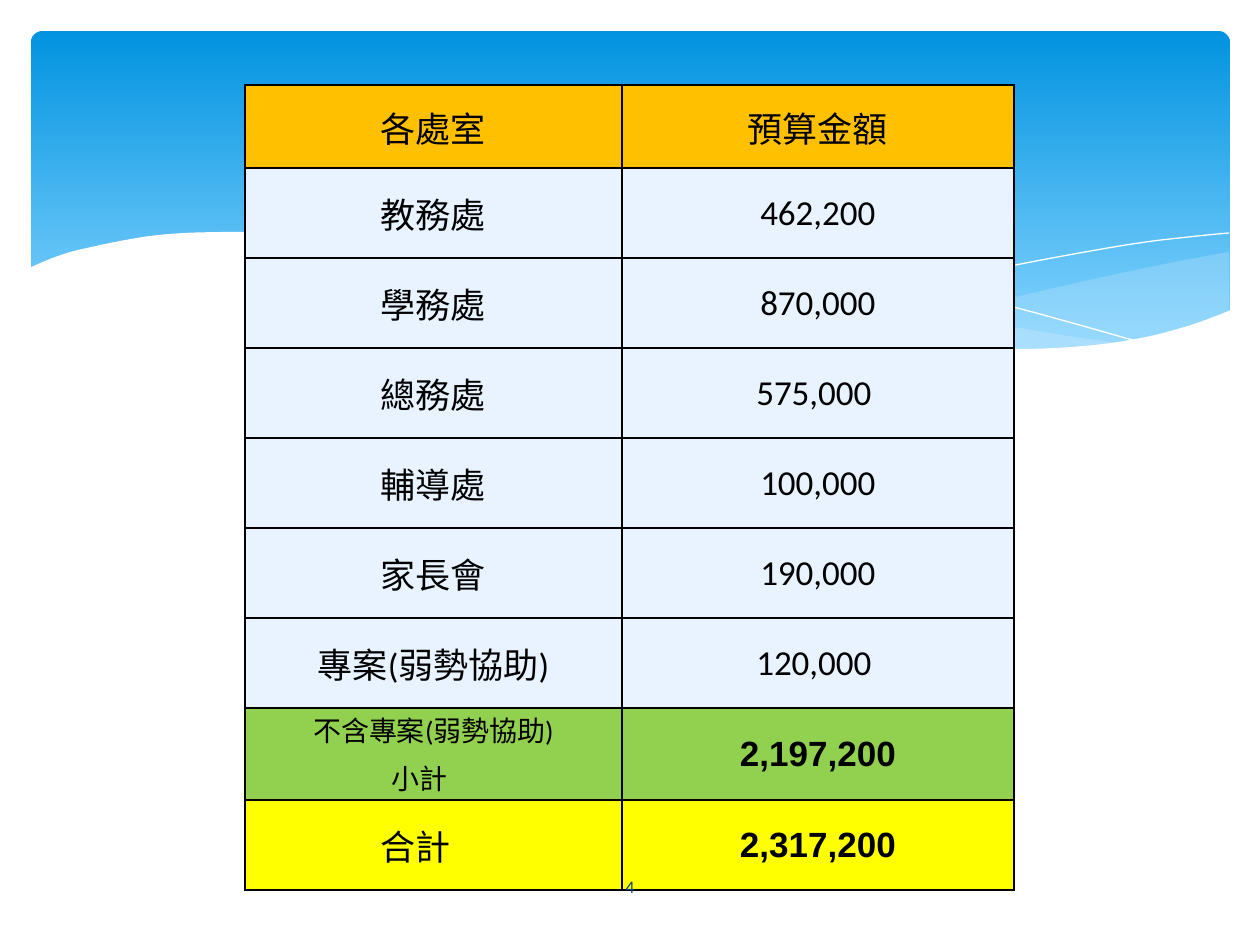
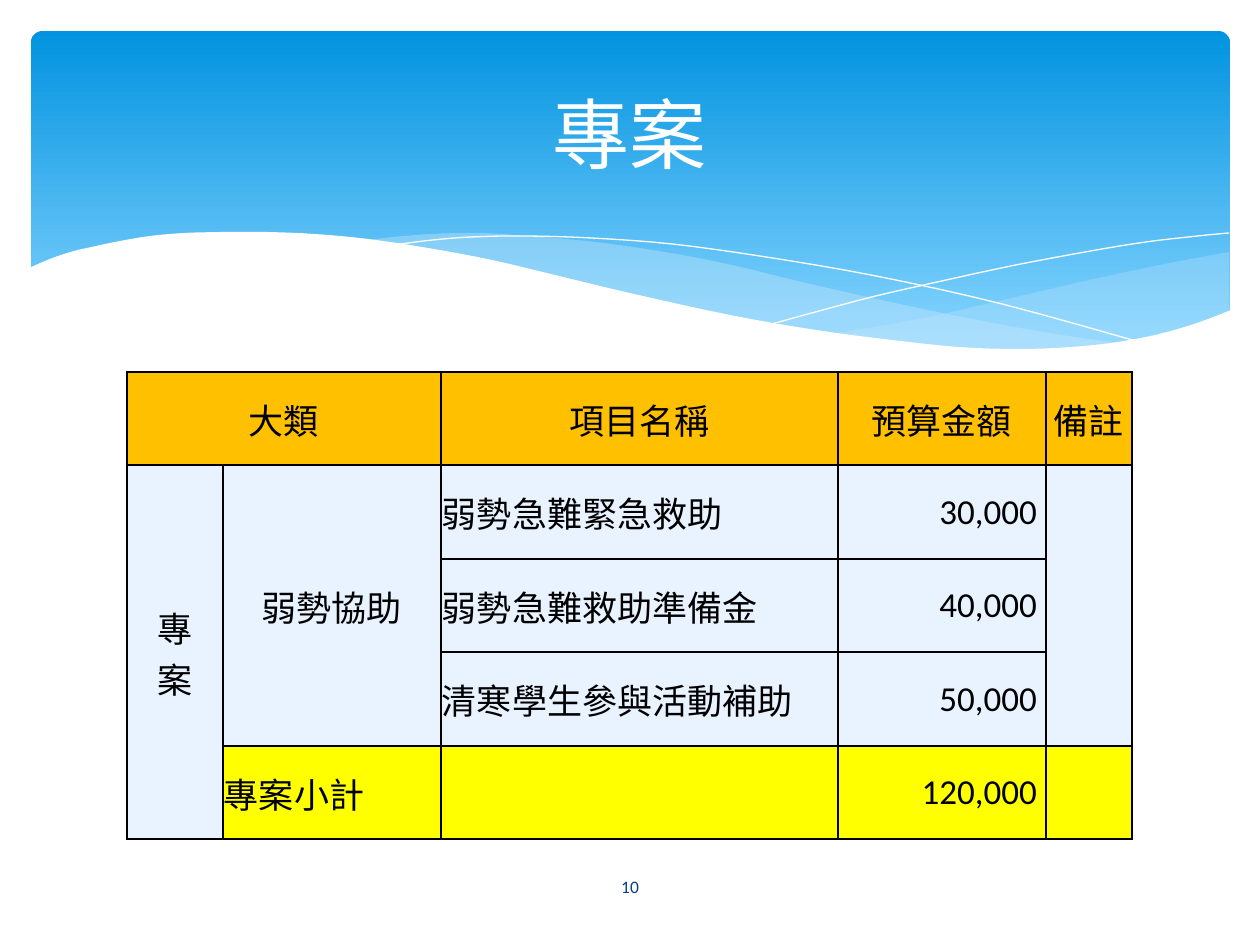
from dataclasses import dataclass
from typing import NamedTuple

from lxml.etree import SubElement
from pptx import Presentation
from pptx.dml.color import RGBColor
from pptx.enum.shapes import MSO_SHAPE as Kind
from pptx.enum.text import MSO_ANCHOR as Anchor, PP_ALIGN as Align
from pptx.oxml.ns import qn
from pptx.util import Emu, Pt

SCALE = 914400 / 126
STEPS = 4
WHITE, BLACK, NAVY = "FFFFFF", "000000", "073E87"
SKY, AQUA, MIST = "0293E0", "83D3FE", "C6E7FC"
GOLD, PALE, GREEN, YELLOW = "FFC000", "E8F3FF", "92D050", "FFFF00"
BODY, BOLD = "Calibri", "Arial"

Point = tuple[float, float]


class Box(NamedTuple):
    left: int
    top: int
    width: int
    height: int


@dataclass(frozen=True)
class Run:
    text: str
    size: int = 20
    font: str = BODY
    colour: str = BLACK
    bold: bool = False


@dataclass(frozen=True)
class Cell:
    paras: tuple[tuple[Run, ...], ...]
    fill: str
    align: Align = Align.CENTER
    down: int = 1
    across: int = 1


@dataclass(frozen=True)
class Grid:
    left: int
    top: int
    cols: tuple[int, ...]
    rows: tuple[int, ...]
    cells: dict[tuple[int, int], Cell]


@dataclass(frozen=True)
class Curve:
    edges: tuple[tuple[Point, ...], ...]
    fill: str = ""
    alpha: int = 100


VEIL_EAST = Curve((
    ((1229, 252), (1212, 255), (1160, 265), (1085, 281), (982, 305),
     (919, 319), (833, 334)),
    ((833, 334), (888, 341), (938, 346), (984, 349), (1026, 350),
     (1077, 348), (1120, 343), (1160, 334), (1196, 324), (1229, 311)),
), MIST, 29)
VEIL_WEST = Curve((
    ((1125, 344), (1055, 334), (977, 320), (890, 302), (793, 280),
     (736, 266), (682, 255), (632, 247), (586, 241), (529, 236),
     (479, 233), (433, 234), (394, 237), (360, 241)),
    ((360, 241), (407, 247), (456, 256), (509, 266), (566, 280),
     (668, 302), (757, 321), (838, 335), (910, 344), (975, 349),
     (1031, 350), (1080, 349), (1125, 344)),
), MIST, 40)
LINE_WEST = Curve((
    ((389, 246), (401, 244), (433, 240), (471, 237), (524, 236),
     (591, 238), (672, 244), (766, 257), (876, 276), (1002, 304),
     (1143, 343)),
))
LINE_EAST = Curve((
    ((772, 324), (823, 310), (876, 296), (942, 281), (1016, 265),
     (1091, 251), (1146, 242), (1198, 236), (1229, 233)),
))
WAVE = Curve((
    ((1231, 310), (1197, 323), (1159, 334), (1118, 342), (1071, 347),
     (1019, 349), (959, 347), (892, 340), (816, 330), (730, 315),
     (634, 294), (563, 277), (492, 260), (428, 248), (368, 239),
     (315, 234), (266, 232), (223, 232), (184, 233), (150, 236),
     (120, 241), (96, 246), (74, 251), (58, 256), (45, 261), (29, 268)),
    ((29, 415), (1231, 415)),
), WHITE)
CURVES = (VEIL_EAST, VEIL_WEST, LINE_WEST, LINE_EAST, WAVE)
BAND = Box(31, 31, 1199, 341)
TITLE = Box(63, 47, 1134, 172)
NUMBER = Box(550, 862, 160, 50)


def px(size: float) -> Emu:
    return Emu(round(size * SCALE))


def rgb(code: str) -> RGBColor:
    return RGBColor.from_string(code)


def smooth(knots: tuple[Point, ...]) -> list[Point]:
    ends = (knots[0], *knots, knots[-1])
    points = [knots[0]]
    for quad in zip(ends, ends[1:], ends[2:], ends[3:]):
        for step in range(1, STEPS + 1):
            t = step / STEPS
            x, y = (
                b + t * (c - a) / 2
                + t * t * (a - 2.5 * b + 2 * c - d / 2)
                + t ** 3 * (3 * b - a - 3 * c + d) / 2
                for a, b, c, d in zip(*quad)
            )
            points.append((x, y))
    return points


def draw_curve(slide, curve: Curve) -> None:
    points = [(px(x), px(y)) for edge in curve.edges for x, y in smooth(edge)]
    pen = slide.shapes.build_freeform(*points[0], scale=1.0)
    pen.add_line_segments(points[1:], close=bool(curve.fill))
    shape = pen.convert_to_shape()
    shape.shadow.inherit = False
    if not curve.fill:
        shape.fill.background()
        shape.line.color.rgb = rgb(WHITE)
        shape.line.width = Pt(0)
        return
    shape.line.fill.background()
    shape.fill.solid()
    shape.fill.fore_color.rgb = rgb(curve.fill)
    if curve.alpha < 100:
        tint = shape._element.spPr.find(qn("a:solidFill")).find(qn("a:srgbClr"))
        SubElement(tint, qn("a:alpha"), val=str(curve.alpha * 1000))


def draw_band(slide) -> None:
    band = slide.shapes.add_shape(Kind.ROUNDED_RECTANGLE, *map(px, BAND))
    band.adjustments[0] = 0.034
    band.shadow.inherit = False
    band.line.fill.background()
    band.fill.gradient()
    band.fill.gradient_angle = 270
    for stop, place, code in zip(band.fill.gradient_stops, (0, 0.9), (SKY, AQUA)):
        stop.position = place
        stop.color.rgb = rgb(code)
    for curve in CURVES:
        draw_curve(slide, curve)


def add_run(para, run: Run) -> None:
    for place, text in enumerate(run.text.split("\n")):
        if place:
            para.add_line_break()
        part = para.add_run()
        part.text = text
        part.font.size = Pt(run.size)
        part.font.name = run.font
        part.font.bold = run.bold
        part.font.color.rgb = rgb(run.colour)


def draw_text(slide, box: Box, run: Run) -> None:
    frame = slide.shapes.add_textbox(*map(px, box)).text_frame
    frame.word_wrap = True
    frame.vertical_anchor = Anchor.MIDDLE
    frame.paragraphs[0].alignment = Align.CENTER
    add_run(frame.paragraphs[0], run)


def add_edges(cell) -> None:
    props = cell._tc.get_or_add_tcPr()
    for place, side in enumerate(("lnL", "lnR", "lnT", "lnB")):
        line = SubElement(props, qn(f"a:{side}"), w=str(Pt(1)))
        SubElement(SubElement(line, qn("a:solidFill")), qn("a:srgbClr"), val=BLACK)
        props.insert(place, line)


def fill_cell(cell, data: Cell) -> None:
    cell.fill.solid()
    cell.fill.fore_color.rgb = rgb(data.fill)
    cell.vertical_anchor = Anchor.MIDDLE
    cell.margin_left = cell.margin_right = cell.margin_top = px(1)
    cell.margin_bottom = 0
    frame = cell.text_frame
    for place, runs in enumerate(data.paras):
        para = frame.add_paragraph() if place else frame.paragraphs[0]
        para.alignment = data.align
        for run in runs:
            add_run(para, run)


def draw_grid(slide, grid: Grid) -> None:
    box = Box(grid.left, grid.top, sum(grid.cols), sum(grid.rows))
    table = slide.shapes.add_table(
        len(grid.rows), len(grid.cols), *map(px, box)).table
    table.first_row = table.horz_banding = False
    for col, width in zip(table.columns, grid.cols):
        col.width = px(width)
    for row, height in zip(table.rows, grid.rows):
        row.height = px(height)
    for (row, col), data in grid.cells.items():
        for down in range(data.down):
            for across in range(data.across):
                cell = table.cell(row + down, col + across)
                cell.fill.solid()
                cell.fill.fore_color.rgb = rgb(data.fill)
                add_edges(cell)
        first = table.cell(row, col)
        if data.down * data.across > 1:
            first.merge(table.cell(row + data.down - 1, col + data.across - 1))
        fill_cell(first, data)


def word(text: str, fill: str, align: Align = Align.CENTER,
         down: int = 1, across: int = 1) -> Cell:
    return Cell(((Run(text),),) if text else (), fill, align, down, across)


def total(text: str, fill: str) -> Cell:
    return Cell(((Run(text, font=BOLD, bold=True),),), fill)


def office_grid() -> Grid:
    sums = (
        ("教務處", "462,200"),
        ("學務處", "870,000"),
        ("總務處", "575,000 "),
        ("輔導處", "100,000"),
        ("家長會", "190,000"),
        ("專案(弱勢協助)", "120,000 "),
    )
    part = Cell(((Run("不含專案(弱勢協助)", 16),),
                 (Run(" 小計", 16), Run("　"))), GREEN)
    lines = [
        (word("各處室", GOLD), word("預算金額", GOLD)),
        *((word(name, PALE), word(sum_, PALE)) for name, sum_ in sums),
        (part, total("2,197,200", GREEN)),
        (word("合計　", YELLOW), total("2,317,200", YELLOW)),
    ]
    cells = {(row, col): cell for row, line in enumerate(lines)
             for col, cell in enumerate(line)}
    return Grid(245, 85, (377, 392), (83,) + (90,) * 8, cells)


def project_grid() -> Grid:
    cells = {
        (0, 0): word("大類", GOLD, across=2),
        (1, 0): word("專\n案", PALE, down=4),
        (1, 1): word("弱勢協助", PALE, down=3),
        (1, 4): word("", PALE, down=3),
        (4, 1): word("專案小計", YELLOW, Align.LEFT),
        (4, 2): word("", YELLOW),
        (4, 3): word("120,000 ", YELLOW, Align.RIGHT),
        (4, 4): word("", YELLOW),
    }
    for col, head in enumerate(("項目名稱", "預算金額", "備註"), 2):
        cells[0, col] = word(head, GOLD)
    items = (
        ("弱勢急難緊急救助", "30,000 "),
        ("弱勢急難救助準備金", "40,000 "),
        ("清寒學生參與活動補助", "50,000 "),
    )
    for row, (name, cost) in enumerate(items, 1):
        cells[row, 2] = word(name, PALE, Align.LEFT)
        cells[row, 3] = word(cost, PALE, Align.RIGHT)
    return Grid(127, 372, (96, 218, 397, 208, 86), (93, 94, 93, 94, 93), cells)


def add_page(deck, title: str, grid: Grid, number: str) -> None:
    slide = deck.slides.add_slide(deck.slide_layouts[6])
    draw_band(slide)
    if title:
        draw_text(slide, TITLE, Run(title, 44, colour=WHITE))
    draw_grid(slide, grid)
    draw_text(slide, NUMBER, Run(number, 10, colour=NAVY))


def main() -> None:
    deck = Presentation()
    deck.slide_width, deck.slide_height = px(1260), px(945)
    add_page(deck, "", office_grid(), "4")
    add_page(deck, "專案", project_grid(), "10")
    deck.save("out.pptx")


if __name__ == "__main__":
    main()
